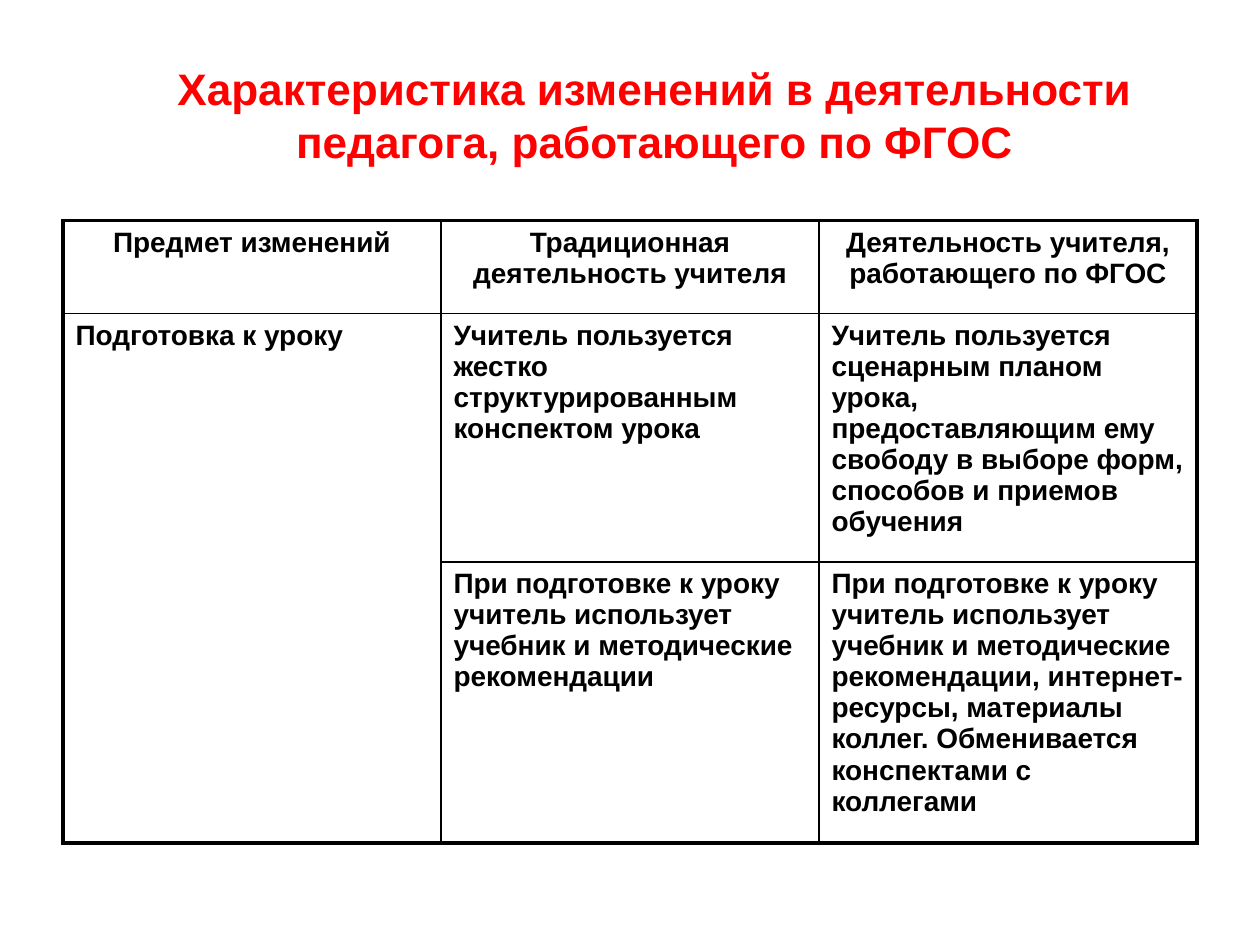
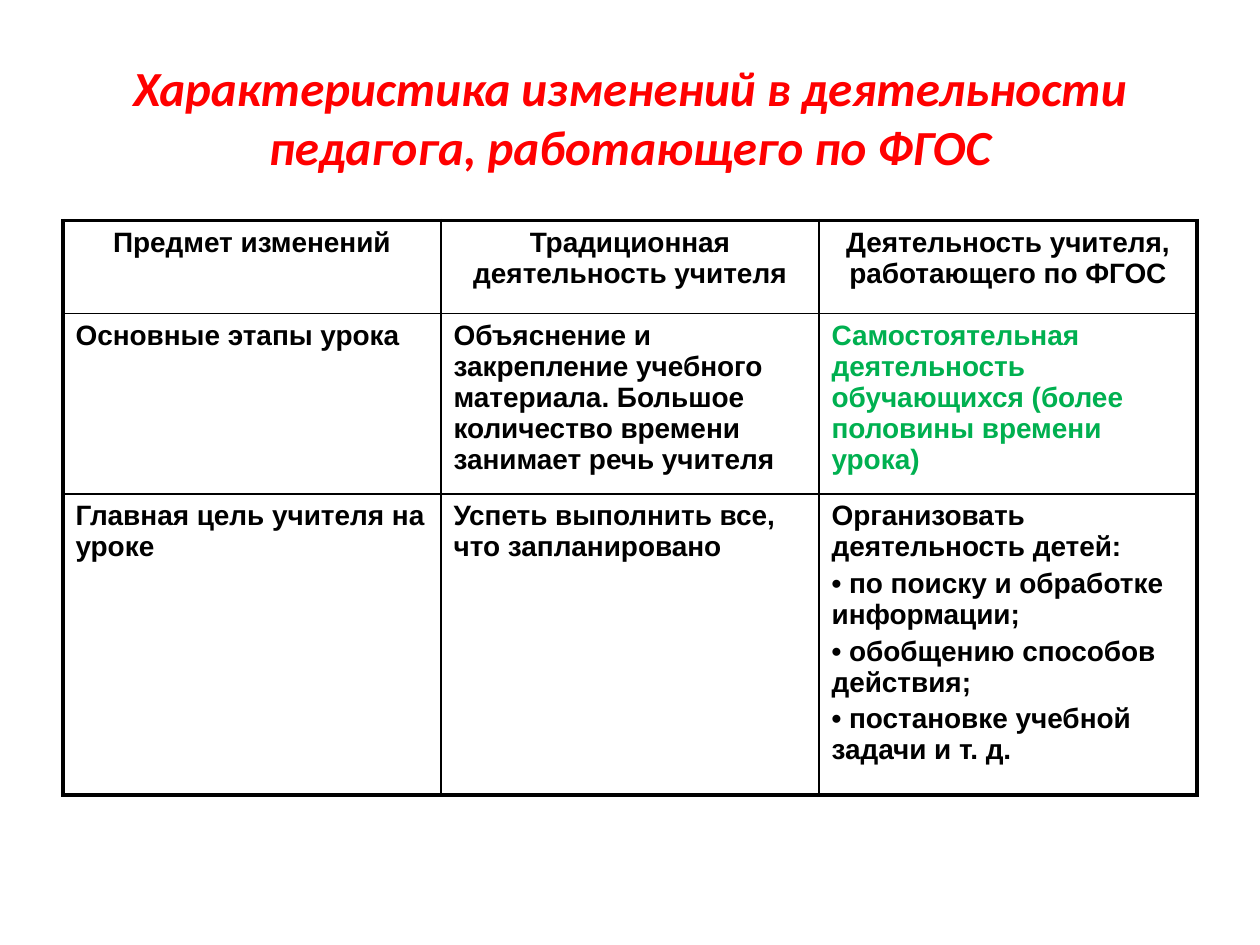
from dataclasses import dataclass

from lxml import etree
from pptx import Presentation
from pptx.dml.color import RGBColor
from pptx.enum.text import MSO_ANCHOR, MSO_AUTO_SIZE, PP_ALIGN
from pptx.oxml.ns import qn
from pptx.util import Inches, Pt

LEFT, CENTER = PP_ALIGN.LEFT, PP_ALIGN.CENTER
MIDDLE = MSO_ANCHOR.MIDDLE
NO_FIT = MSO_AUTO_SIZE.NONE
TITLE_ONLY = 5


@dataclass(frozen=True)
class Theme:
    title_color: str = "FF0000"
    text_color: str = "000000"
    accent_color: str = "00B050"
    table_font: str = "Arial"
    table_size: float = 16
    paragraph_gap: float = 3.2
    outer_line: float = 2.25
    inner_line: float = 1


THEME = Theme()


def write_text(frame, text, font=THEME.table_font, size=THEME.table_size,
               color=THEME.text_color, italic=False, align=LEFT):
    frame.word_wrap = True
    for index, line in enumerate(text.split("\n")):
        para = frame.add_paragraph() if index else frame.paragraphs[0]
        para.alignment = align
        para.space_before = Pt(THEME.paragraph_gap if index else 0)
        span = para.add_run()
        span.text = line
        span.font.name = font
        span.font.size = Pt(size)
        span.font.bold = True
        span.font.italic = italic
        span.font.color.rgb = RGBColor.from_string(color)


def draw_borders(cell, outer_edges):
    properties = cell._tc.get_or_add_tcPr()
    for side, is_outer in zip("LRTB", outer_edges):
        width = THEME.outer_line if is_outer else THEME.inner_line
        line = etree.SubElement(properties, qn(f"a:ln{side}"), w=str(Pt(width)))
        fill = etree.SubElement(line, qn("a:solidFill"))
        etree.SubElement(fill, qn("a:srgbClr"), val=THEME.text_color)


TITLE = "Характеристика изменений в деятельности педагога, работающего по ФГОС"
HEADER = [
    "Предмет изменений",
    "Традиционная деятельность учителя",
    "Деятельность учителя, работающего по ФГОС",
]
PAGES = [
    {
        "title_box": (1.06, 0.28, 8.27, 1.25),
        "title_format": {"font": "Arial", "size": 25.2},
        "row_heights": [0.74, 1.97, 2.23],
        "rows": [
            ["Подготовка к уроку",
             "Учитель пользуется жестко структурированным конспектом урока",
             "Учитель пользуется сценарным планом урока, предоставляющим ему "
             "свободу в выборе форм, способов и приемов обучения"],
            [None,
             "При подготовке к уроку учитель использует учебник и "
             "методические рекомендации",
             "При подготовке к уроку учитель использует учебник и "
             "методические рекомендации, интернет-ресурсы, материалы коллег. "
             "Обменивается конспектами с коллегами"],
        ],
        "accent_cell": None,
    },
    {
        "title_box": (0.5, 0.3, 9, 1.25),
        "title_format": {"font": "Calibri", "size": 28, "italic": True},
        "row_heights": [0.74, 1.43, 2.39],
        "rows": [
            ["Основные этапы урока",
             "Объяснение и закрепление учебного материала. Большое количество "
             "времени занимает речь учителя",
             "Самостоятельная деятельность обучающихся (более половины "
             "времени урока)"],
            ["Главная цель учителя на уроке",
             "Успеть выполнить все, что запланировано",
             "Организовать деятельность детей:\n"
             "• по поиску и обработке информации;\n"
             "• обобщению способов действия;\n"
             "• постановке учебной задачи и т. д."],
        ],
        "accent_cell": (1, 2),
    },
]

deck = Presentation()
deck.slide_width, deck.slide_height = Inches(10), Inches(7.5)

for content in PAGES:
    page = deck.slides.add_slide(deck.slide_layouts[TITLE_ONLY])
    title = page.shapes.title
    title.left, title.top, title.width, title.height = map(Inches, content["title_box"])
    title.text_frame.auto_size = NO_FIT
    title.text_frame.vertical_anchor = MIDDLE
    write_text(title.text_frame, TITLE, color=THEME.title_color, align=CENTER,
               **content["title_format"])

    rows = [HEADER] + content["rows"]
    heights = content["row_heights"]
    table = page.shapes.add_table(len(rows), len(HEADER), Inches(0.5), Inches(1.75),
                                  Inches(9), Inches(sum(heights))).table
    table.first_row = table.horz_banding = False
    for row, height in zip(table.rows, heights):
        row.height = Inches(height)

    for row_index, texts in enumerate(rows):
        for column_index, text in enumerate(texts):
            if text is None:
                table.cell(row_index - 1, column_index).merge(
                    table.cell(row_index, column_index))

    for row_index, texts in enumerate(rows):
        for column_index, text in enumerate(texts):
            cell = table.cell(row_index, column_index)
            if not cell.is_spanned:
                last_row = row_index + cell.span_height - 1
                draw_borders(cell, (column_index == 0, column_index == len(HEADER) - 1,
                                    row_index == 0, last_row == len(rows) - 1))
                is_accent = (row_index, column_index) == content["accent_cell"]
                write_text(cell.text_frame, text,
                           color=THEME.accent_color if is_accent else THEME.text_color,
                           align=LEFT if row_index else CENTER)
            cell.fill.background()

deck.save("out.pptx")
